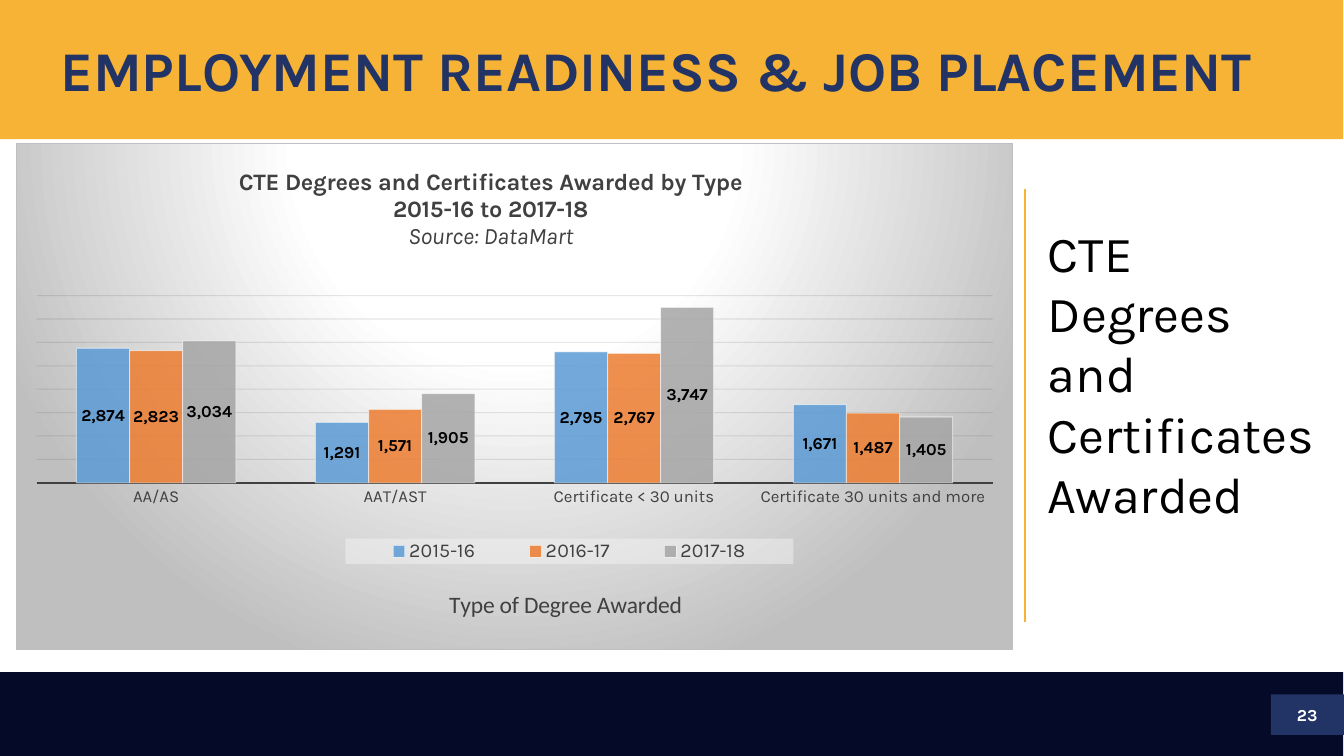
from lxml import etree
from pptx import Presentation
from pptx import util as u
from pptx.chart.data import CategoryChartData
from pptx.dml.color import RGBColor
from pptx.enum import chart as ch
from pptx.enum import shapes, text
from pptx.oxml import parse_xml
from pptx.oxml.ns import nsdecls, qn

COLORS = {
    "gold": "F6B336", "night": "050A28", "navy": "223365", "white": "FFFFFF",
    "black": "000000", "gray": "404040", "silver": "BFBFBF", "grid": "0D0D0D",
    "legend": "F2F2F2",
}
BANDS = [
    ("gold", (-0.03, 0, 33.88, 3.51)),
    ("night", (-0.03, 16.94, 33.88, 2.13)),
    ("navy", (32.03, 17.5, 1.88, 1.02)),
]
MIDDLE, TOP = text.MSO_ANCHOR.MIDDLE, text.MSO_ANCHOR.TOP
LEFT, CENTER = text.PP_ALIGN.LEFT, text.PP_ALIGN.CENTER
TEXTS = [
    ("EMPLOYMENT READINESS & JOB PLACEMENT", (1.27, 0, 31.22, 3.68), 40, "navy", True, MIDDLE, LEFT, 0.9),
    ("23", (32.03, 17.5, 1.83, 1.02), 12, "white", True, MIDDLE, CENTER, 1.0),
    ("CTE Degrees and Certificates Awarded", (26.16, 5.46, 7.29, 7.95), 36, "black", False, TOP, LEFT, 1.0),
]
DIVIDER = (25.83, 4.75, 25.83, 15.67)
CHART_BOX = (0.41, 3.61, 25.12, 12.78)
CHART_TITLE = [
    ("CTE Degrees and Certificates Awarded by Type", True, False),
    ("2015-16 to 2017-18", True, False),
    ("Source: DataMart", False, True),
]
AXIS_TITLE = [("Type of Degree Awarded", False, False)]
DEGREE_TYPES = ["AA/AS", "AAT/AST", "Certificate < 30 units", "Certificate 30 units and more"]
YEARS = [
    ("2015-16", "5B9BD5", (2874, 1291, 2795, 1671)),
    ("2016-17", "ED7D31", (2823, 1571, 2767, 1487)),
    ("2017-18", "A5A5A5", (3034, 1905, 3747, 1405)),
]


def rgb(name):
    return RGBColor.from_string(COLORS.get(name, name))


def style(font, size, color, name="Karla", bold=False, italic=False):
    font.size, font.name, font.bold, font.italic = u.Pt(size), name, bold, italic
    font.color.rgb = rgb(color)


def stroke(line, color, width):
    line.color.rgb = rgb(color)
    line.width = u.Pt(width)


def fade(color_elements, percent):
    for element in color_elements:
        etree.SubElement(element, qn("a:alpha"), val=str(percent * 1000))


def place(parent, index, x, y, w=None, h=None, inner=False):
    for old in parent.findall(qn("c:layout")):
        parent.remove(old)
    layout = etree.Element(qn("c:layout"))
    manual = etree.SubElement(layout, qn("c:manualLayout"))
    settings = [("layoutTarget", "inner")] if inner else []
    settings += [("xMode", "edge"), ("yMode", "edge"), ("x", x), ("y", y)]
    if w is not None:
        settings += [("w", w), ("h", h)]
    for tag, value in settings:
        etree.SubElement(manual, qn("c:" + tag), val=str(value))
    parent.insert(index, layout)


def write_lines(frame, lines, font_name):
    for i, (words, bold, italic) in enumerate(lines):
        paragraph = frame.add_paragraph() if i else frame.paragraphs[0]
        paragraph.alignment = CENTER
        run = paragraph.add_run()
        run.text = words
        style(run.font, 16.8, "gray", font_name, bold, italic)


def add_band(slide, color, box):
    band = slide.shapes.add_shape(shapes.MSO_SHAPE.RECTANGLE, *map(u.Cm, box))
    band.shadow.inherit = False
    band.fill.solid()
    band.fill.fore_color.rgb = rgb(color)
    band.line.fill.background()


def add_text(slide, words, box, size, color, bold, anchor, align, spacing):
    frame = slide.shapes.add_textbox(*map(u.Cm, box)).text_frame
    frame.word_wrap = True
    frame.vertical_anchor = anchor
    paragraph = frame.paragraphs[0]
    paragraph.alignment = align
    paragraph.line_spacing = spacing
    run = paragraph.add_run()
    run.text = words
    style(run.font, size, color, bold=bold)


def add_degree_chart(slide):
    data = CategoryChartData(number_format="#,##0")
    data.categories = DEGREE_TYPES
    for year, _, awards in YEARS:
        data.add_series(year, awards)
    chart = slide.shapes.add_chart(
        ch.XL_CHART_TYPE.COLUMN_CLUSTERED, *map(u.Cm, CHART_BOX), data).chart
    style(chart.font, 10, "black", "Calibri")

    chart.has_title = True
    write_lines(chart.chart_title.text_frame, CHART_TITLE, "Karla")
    place(chart.chart_title._element, 1, 0.22, 0.04)

    degrees = chart.category_axis
    degrees.major_tick_mark = ch.XL_TICK_MARK.NONE
    style(degrees.tick_labels.font, 12, "gray")
    stroke(degrees.format.line, "gray", 1.5)
    write_lines(degrees.axis_title.text_frame, AXIS_TITLE, "Calibri")
    place(degrees.axis_title._element, 1, 0.43, 0.87)

    awards_axis = chart.value_axis
    awards_axis.minimum_scale, awards_axis.maximum_scale = 0, 4000
    awards_axis.major_unit = 500
    awards_axis.has_major_gridlines = True
    stroke(awards_axis.major_gridlines.format.line, "grid", 0.75)
    fade(awards_axis._element.xpath("c:majorGridlines//a:srgbClr"), 10)
    awards_axis.visible = False

    plot = chart.plots[0]
    plot.gap_width, plot.overlap = 150, 0
    plot.vary_by_categories = False
    for series, (_, color, _) in zip(plot.series, YEARS):
        series.format.fill.solid()
        series.format.fill.fore_color.rgb = rgb(color)
        stroke(series.format.line, "white", 0.75)
        fade(series._element.xpath("c:spPr/a:solidFill/a:srgbClr"), 85)
        fade(series._element.xpath("c:spPr/a:ln//a:srgbClr"), 50)
        labels = series.data_labels
        labels.show_value = True
        labels.position = ch.XL_LABEL_POSITION.CENTER
        labels.number_format, labels.number_format_is_linked = "#,##0", False
        style(labels.font, 12, "black", bold=True)

    chart.has_legend = True
    legend = chart.legend
    legend.position = ch.XL_LEGEND_POSITION.BOTTOM
    legend.include_in_layout = False
    style(legend.font, 14, "gray")
    place(legend._element, 1, 0.33, 0.78, 0.45, 0.05)
    legend._element.find(qn("c:txPr")).addprevious(parse_xml(
        f'<c:spPr {nsdecls("c", "a")}><a:solidFill><a:srgbClr val="{COLORS["legend"]}">'
        '<a:alpha val="50000"/></a:srgbClr></a:solidFill></c:spPr>'))

    chart_part = chart._chartSpace.find(qn("c:chart"))
    place(chart_part.find(qn("c:plotArea")), 0, 0.02, 0.3, 0.96, 0.37, True)
    stops = "".join(
        f'<a:gs pos="{at * 1000}"><a:srgbClr val="{COLORS[color]}"/></a:gs>'
        for at, color in [(0, "white"), (39, "white"), (100, "silver")])
    chart_part.addnext(parse_xml(
        f'<c:spPr {nsdecls("c", "a")}><a:gradFill><a:gsLst>{stops}</a:gsLst>'
        '<a:path path="circle"><a:fillToRect l="50000" t="-80000" r="50000" b="180000"/>'
        '</a:path></a:gradFill><a:ln w="9525"><a:solidFill>'
        f'<a:srgbClr val="{COLORS["silver"]}"/></a:solidFill></a:ln></c:spPr>'))


def main():
    deck = Presentation()
    deck.slide_width, deck.slide_height = u.Cm(33.87), u.Cm(19.05)
    slide = deck.slides.add_slide(deck.slide_layouts[6])
    for band in BANDS:
        add_band(slide, *band)
    for words in TEXTS:
        add_text(slide, *words)
    divider = slide.shapes.add_connector(
        shapes.MSO_CONNECTOR.STRAIGHT, *map(u.Cm, DIVIDER))
    stroke(divider.line, "gold", 1.5)
    etree.SubElement(divider._element.spPr, qn("a:effectLst"))
    add_degree_chart(slide)
    deck.save("out.pptx")


if __name__ == "__main__":
    main()
